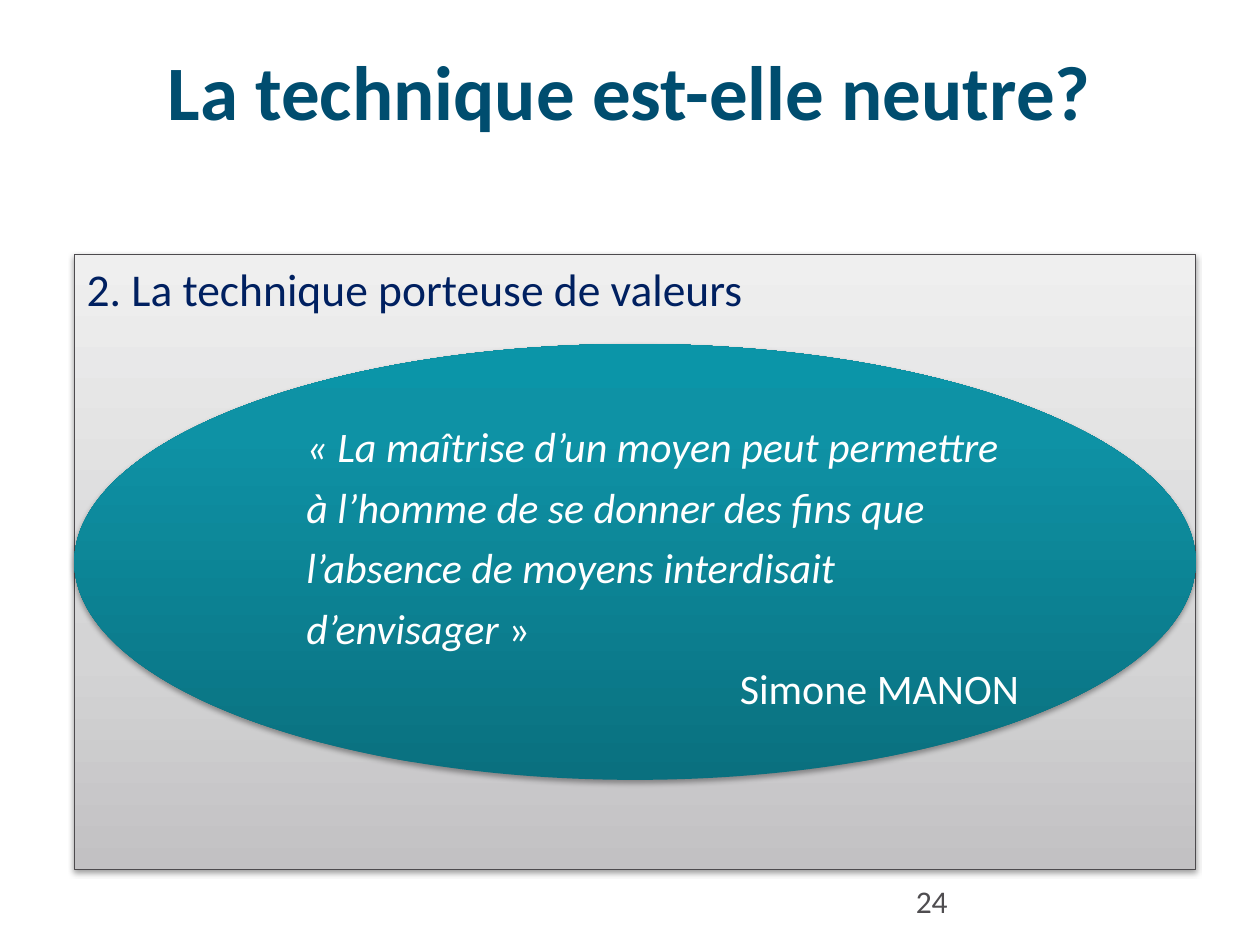
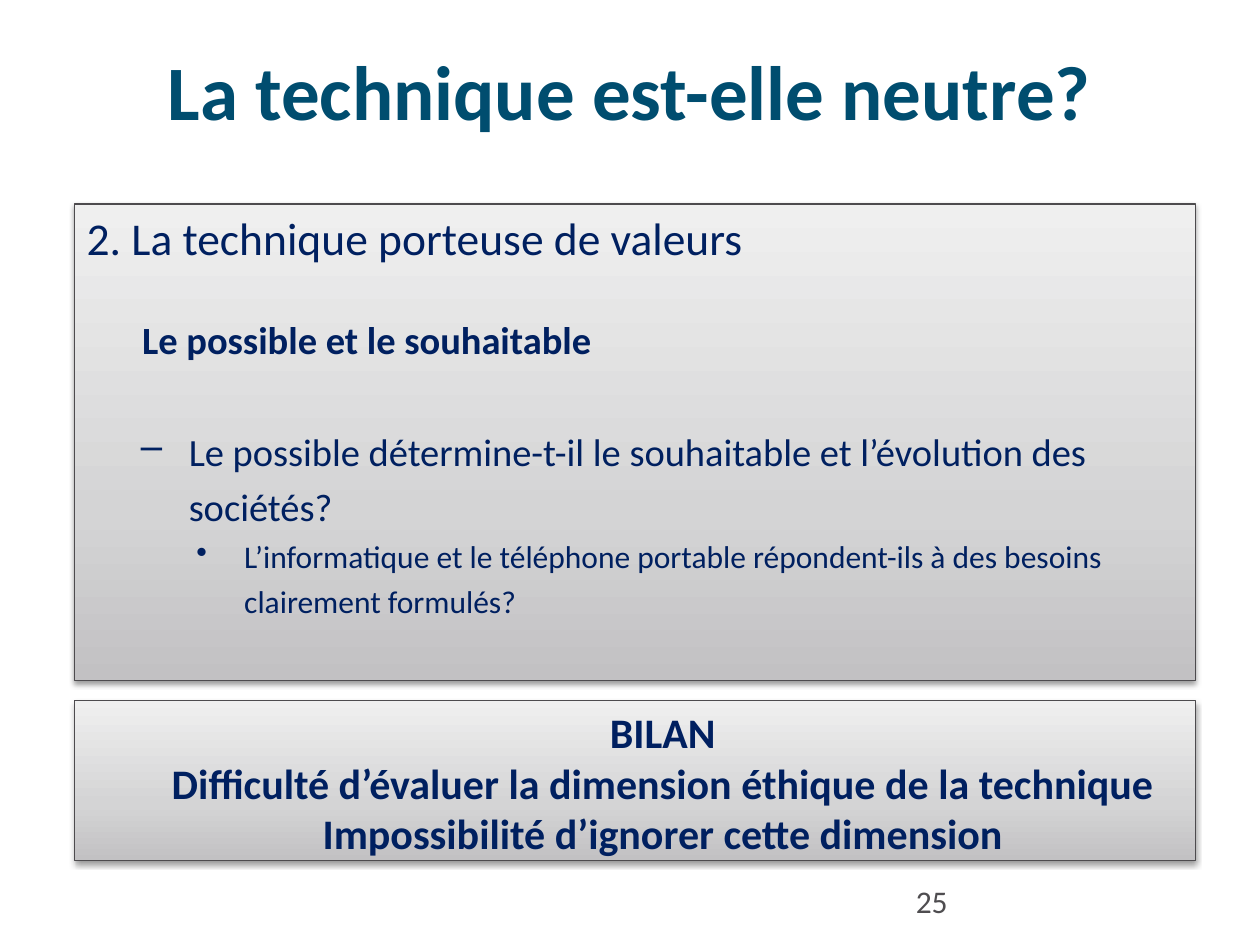
import pptx
import pptx.util
import pptx.oxml
import pptx.dml.color
import pptx.enum.shapes
import pptx.enum.text
import pptx.oxml.ns

Inches = pptx.util.Inches
Pt = pptx.util.Pt
qn = pptx.oxml.ns.qn
FORM = pptx.enum.shapes.MSO_SHAPE
ALIGN = pptx.enum.text.PP_ALIGN
ANCHOR = pptx.enum.text.MSO_ANCHOR
NS = 'xmlns:a="http://schemas.openxmlformats.org/drawingml/2006/main"'


def color(code):
    return pptx.dml.color.RGBColor.from_string(code)


class Deck:
    FONT = "Calibri"
    TITLE, NAVY, EDGE, GRAY, WHITE = "004D6F", "002060", "4D4B4E", "4F4D50", "FFFFFF"
    SILVER = [(0, "C2C1C3"), (35, "D4D4D5"), (100, "EFEFEF")]
    TEAL = [(0, "0A707F"), (80, "0E92A5"), (100, "0B95A8")]
    LEFT, WIDTH = 0.59, 8.9

    def __init__(self):
        self.file = pptx.Presentation()
        self.file.slide_width, self.file.slide_height = Inches(10), Inches(7.5)

    def start(self, title, number):
        """Add a slide with its title and page number."""
        self.slide = self.file.slides.add_slide(self.file.slide_layouts[6])
        self.label(0.5, 0.3, 9, 1.25, title, 44, self.TITLE, ALIGN.CENTER, True)
        self.label(7.17, 6.95, 2.33, 0.4, str(number), 18, self.GRAY)

    def label(self, left, top, width, height, text, size, tint,
              align=ALIGN.LEFT, bold=False):
        box = self.slide.shapes.add_textbox(
            Inches(left), Inches(top), Inches(width), Inches(height))
        box.text_frame.word_wrap = True
        self.line(box.text_frame, text, size, tint, align=align, bold=bold)

    def panel(self, top, height, form=FORM.RECTANGLE, stops=SILVER,
              edge=EDGE, shade=38, drop=1.6, anchor=ANCHOR.TOP):
        """Add a full-width gradient shape with a soft shadow; return its text frame."""
        shape = self.slide.shapes.add_shape(
            form, Inches(self.LEFT), Inches(top), Inches(self.WIDTH), Inches(height))
        shape.fill.gradient()
        shape.fill.gradient_angle = 90
        ramp = shape.element.spPr.find(qn("a:gradFill")).find(qn("a:gsLst"))
        for stop in list(ramp):
            ramp.remove(stop)
        for place, code in stops:
            ramp.append(pptx.oxml.parse_xml(
                f'<a:gs {NS} pos="{place * 1000}"><a:srgbClr val="{code}"/></a:gs>'))
        if edge:
            shape.line.color.rgb = color(edge)
            shape.line.width = Pt(0.75)
        else:
            shape.line.fill.background()
        shape.shadow.inherit = False
        shape.element.spPr.find(qn("a:effectLst")).append(pptx.oxml.parse_xml(
            f'<a:outerShdw {NS} blurRad="{Pt(3.1)}" dist="{Pt(drop)}" dir="5400000" '
            f'rotWithShape="0"><a:srgbClr val="000000"><a:alpha val="{shade * 1000}"/>'
            '</a:srgbClr></a:outerShdw>'))
        frame = shape.text_frame
        frame.word_wrap = True
        frame.vertical_anchor = anchor
        return frame

    def line(self, frame, text, size, tint=NAVY, align=ALIGN.LEFT, bold=False,
             margin=0, hang=0, mark=None, pitch=None, before=0, after=0):
        """Fill the first empty paragraph, or add one, and return it."""
        para = frame.paragraphs[0]
        if para.runs:
            para = frame.add_paragraph()
        props = para._p.get_or_add_pPr()
        props.set("marL", str(Inches(margin)))
        props.set("indent", str(Inches(-hang)))
        if mark:
            props.append(pptx.oxml.parse_xml(f'<a:buChar {NS} char="{mark}"/>'))
        para.alignment = align
        para.space_before, para.space_after = Pt(before), Pt(after)
        if pitch:
            para.line_spacing = pitch
        font = para.font
        font.name, font.size, font.bold = self.FONT, Pt(size), bold
        font.color.rgb = color(tint)
        para.add_run().text = text
        return para

    def head(self, frame, text):
        self.line(frame, text, 26, after=24)


def main():
    title = "La technique est-elle neutre?"
    topic = "2. La technique porteuse de valeurs"
    deck = Deck()

    deck.start(title, 24)
    deck.head(deck.panel(2.02, 4.88), topic)
    quote = deck.panel(2.73, 3.46, FORM.OVAL, deck.TEAL, None, 35, 1.8, ANCHOR.MIDDLE)
    style = dict(size=24, tint=deck.WHITE, margin=0.44, pitch=1.2)
    words = deck.line(
        quote, "« La maîtrise d’un moyen peut permettre à l’homme de se donner des fins "
        "que l’absence de moyens interdisait d’envisager ", **style)
    words.runs[0].font.italic = True
    words.add_run().text = "»"
    deck.line(quote, "Simone MANON", align=ALIGN.RIGHT, **style)

    deck.start(title, 25)
    body = deck.panel(1.62, 3.78)
    deck.head(body, topic)
    deck.line(body, "Le possible et le souhaitable", 22, bold=True, margin=0.44, pitch=1.2)
    deck.line(body, "Le possible détermine-t-il le souhaitable et l’évolution des sociétés?",
              22, margin=0.81, hang=0.38, mark="–", pitch=1.2, before=32)
    deck.line(body, "L’informatique et le téléphone portable répondent-ils à des besoins "
              "clairement formulés?", 18, margin=1.25, hang=0.38, mark="•", pitch=1.2)
    result = deck.panel(5.56, 1.27)
    for text in ("BILAN", "Difficulté d’évaluer la dimension éthique de la technique",
                 "Impossibilité d’ignorer cette dimension"):
        deck.line(result, text, 24, align=ALIGN.CENTER, bold=True, margin=0.44)

    deck.file.save("out.pptx")


if __name__ == "__main__":
    main()
